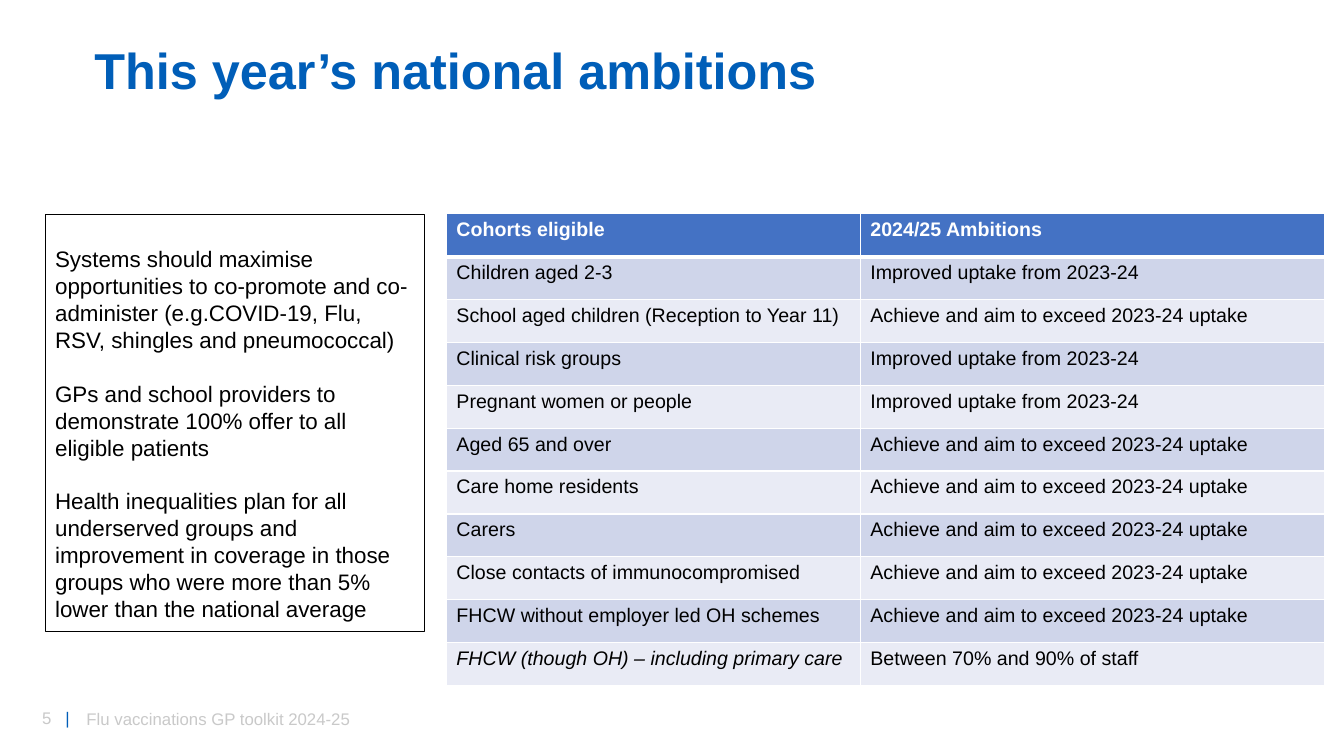
from dataclasses import dataclass

from lxml import etree
from pptx import Presentation
from pptx.dml.color import RGBColor
from pptx.enum.shapes import MSO_SHAPE
from pptx.enum.text import MSO_ANCHOR, PP_ALIGN
from pptx.oxml.ns import qn
from pptx.util import Cm, Pt

BLUE = RGBColor(0x00, 0x5E, 0xB8)
GREY = RGBColor(0xC9, 0xC9, 0xC9)
BLACK = RGBColor(0x00, 0x00, 0x00)
WHITE = RGBColor(0xFF, 0xFF, 0xFF)
HEADER_FILL = RGBColor(0x44, 0x72, 0xC4)
BAND_FILLS = (RGBColor(0xCF, 0xD5, 0xEA), RGBColor(0xE9, 0xEB, 0xF5))

RECTANGLE = MSO_SHAPE.RECTANGLE
TOP, MIDDLE = MSO_ANCHOR.TOP, MSO_ANCHOR.MIDDLE
LEFT = PP_ALIGN.LEFT

FONT = "Arial"
BODY_LINE = Pt(19.2)
ROW_HEIGHT = Cm(1.08)
COLUMN_WIDTHS = (Cm(10.43), Cm(11.69))


@dataclass(frozen=True)
class Span:
    text: str
    size: int
    color: RGBColor
    bold: bool = False
    italic: bool = False


@dataclass(frozen=True)
class Place:
    left: float
    top: float
    width: float
    height: float

    def lengths(self):
        return Cm(self.left), Cm(self.top), Cm(self.width), Cm(self.height)


@dataclass(frozen=True)
class Cohort:
    name: str
    ambition: str
    italic: bool = False


IMPROVE = "Improved uptake from 2023-24"
EXCEED = "Achieve and aim to exceed 2023-24 uptake"

COHORTS = (
    Cohort("Children aged 2-3", IMPROVE),
    Cohort("School aged children (Reception to Year 11)", EXCEED),
    Cohort("Clinical risk groups", IMPROVE),
    Cohort("Pregnant women or people", IMPROVE),
    Cohort("Aged 65 and over", EXCEED),
    Cohort("Care home residents", EXCEED),
    Cohort("Carers", EXCEED),
    Cohort("Close contacts of immunocompromised", EXCEED),
    Cohort("FHCW without employer led OH schemes", EXCEED),
    Cohort("FHCW (though OH) – including primary care",
           "Between 70% and 90% of staff", italic=True),
)

PRIORITIES = (
    "Systems should maximise opportunities to co-promote and co-administer "
    "(e.g.COVID-19, Flu, RSV, shingles and pneumococcal)",
    "GPs and school providers to demonstrate 100% offer to all eligible patients",
    "Health inequalities plan for all underserved groups and improvement in "
    "coverage in those groups who were more than 5% lower than the national average",
)


def add_spans(para, *spans: Span) -> None:
    for span in spans:
        run = para.add_run()
        run.text = span.text
        run.font.name = FONT
        run.font.size = Pt(span.size)
        run.font.bold = span.bold
        run.font.italic = span.italic
        run.font.color.rgb = span.color


def add_text(page, place: Place, *spans: Span, anchor=TOP):
    """Add a one-paragraph text box and return its paragraph."""
    frame = page.shapes.add_textbox(*place.lengths()).text_frame
    frame.word_wrap = True
    frame.vertical_anchor = anchor
    para = frame.paragraphs[0]
    add_spans(para, *spans)
    return para


def add_tab_stop(para, position: Cm) -> None:
    stops = etree.SubElement(para._p.get_or_add_pPr(), qn("a:tabLst"))
    etree.SubElement(stops, qn("a:tab"), pos=str(int(position)), algn="l")


def add_priorities(page, place: Place) -> None:
    box = page.shapes.add_shape(RECTANGLE, *place.lengths())
    box.shadow.inherit = False
    box.fill.background()
    box.line.color.rgb = BLACK
    box.line.width = Pt(0.5)
    frame = box.text_frame
    frame.word_wrap = True
    frame.vertical_anchor = TOP
    frame.margin_top = Cm(0.8)
    for index, text in enumerate(PRIORITIES):
        para = frame.add_paragraph() if index else frame.paragraphs[0]
        para.alignment = LEFT
        para.line_spacing = BODY_LINE
        if index:
            para.space_before = BODY_LINE
        add_spans(para, Span(text, 16, BLACK))


def add_borders(cell, top: int, bottom: int) -> None:
    """Draw white cell edges; top and bottom are widths in points."""
    properties = cell._tc.get_or_add_tcPr()
    for edge, width in (("lnL", 1), ("lnR", 1), ("lnT", top), ("lnB", bottom)):
        line = etree.SubElement(properties, qn(f"a:{edge}"), w=str(int(Pt(width))))
        fill = etree.SubElement(line, qn("a:solidFill"))
        etree.SubElement(fill, qn("a:srgbClr"), val=str(WHITE))


def fill_cell(cell, span: Span, color: RGBColor, top: int = 1, bottom: int = 1) -> None:
    add_borders(cell, top, bottom)
    cell.fill.solid()
    cell.fill.fore_color.rgb = color
    add_spans(cell.text_frame.paragraphs[0], span)


def add_cohort_table(page, left: Cm, top: Cm) -> None:
    row_count = len(COHORTS) + 1
    table = page.shapes.add_table(row_count, len(COLUMN_WIDTHS), left, top,
                                  sum(COLUMN_WIDTHS), ROW_HEIGHT * row_count).table
    for column, width in zip(table.columns, COLUMN_WIDTHS):
        column.width = width
    for row in table.rows:
        row.height = ROW_HEIGHT
    for column, heading in enumerate(("Cohorts eligible", "2024/25 Ambitions")):
        fill_cell(table.cell(0, column), Span(heading, 14, WHITE, bold=True),
                  HEADER_FILL, bottom=3)
    for row, cohort in enumerate(COHORTS, start=1):
        color = BAND_FILLS[(row - 1) % 2]
        top_width = 3 if row == 1 else 1
        fill_cell(table.cell(row, 0),
                  Span(cohort.name, 14, BLACK, italic=cohort.italic), color, top_width)
        fill_cell(table.cell(row, 1), Span(cohort.ambition, 14, BLACK), color, top_width)


def main() -> None:
    deck = Presentation()
    deck.slide_width, deck.slide_height = Cm(33.87), Cm(19.05)
    page = deck.slides.add_slide(deck.slide_layouts[6])

    number = add_text(page, Place(0.81, 17.7, 1.8, 0.76),
                      Span("5\t", 12, GREY), Span("|", 12, BLUE))
    add_tab_stop(number, Cm(0.59))
    title = add_text(page, Place(2.13, 0.99, 29.57, 1.7),
                     Span("This year’s national ambitions", 36, BLUE, bold=True),
                     anchor=MIDDLE)
    title.line_spacing = 0.9
    add_priorities(page, Place(1.14, 5.39, 9.55, 10.52))
    add_cohort_table(page, Cm(11.25), Cm(5.39))
    add_text(page, Place(1.93, 17.6, 15.9, 1.02),
             Span("Flu vaccinations GP toolkit 2024-25", 12, GREY), anchor=MIDDLE)

    deck.save("out.pptx")


if __name__ == "__main__":
    main()
